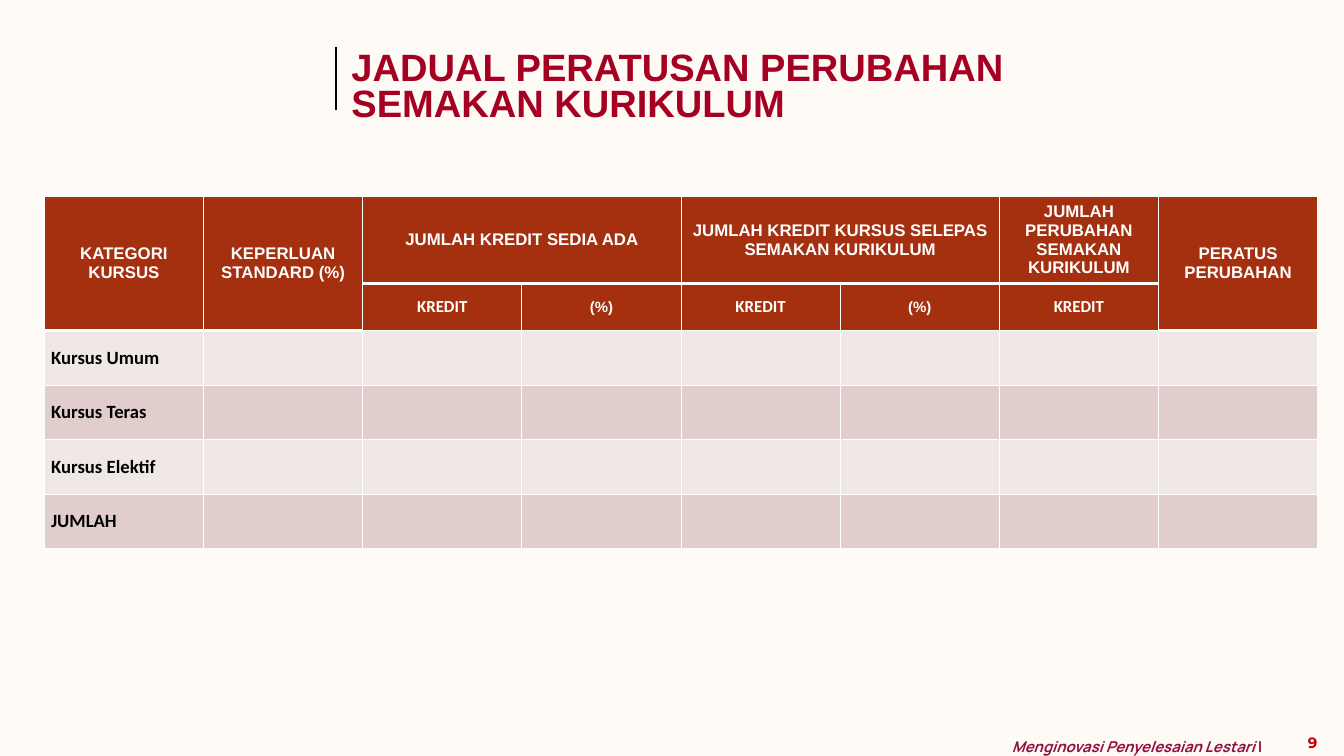
"""Build the slide with the table of curriculum revision percentages."""
from pptx import Presentation
from pptx.dml.color import RGBColor
from pptx.enum.shapes import MSO_CONNECTOR
from pptx.enum.text import MSO_ANCHOR, PP_ALIGN
from pptx.oxml import parse_xml
from pptx.oxml.ns import nsdecls
from pptx.util import Inches, Pt

CREAM = RGBColor(0xFE, 0xFA, 0xF5)
CRIMSON = RGBColor(0xA5, 0x00, 0x21)
PLUM = RGBColor(0x90, 0x10, 0x42)
RED = RGBColor(0xC0, 0x00, 0x00)
RUST = RGBColor(0xA5, 0x30, 0x0F)
PALE = RGBColor(0xF0, 0xE8, 0xE7)
ROSE = RGBColor(0xE1, 0xCD, 0xCC)
WHITE = RGBColor(0xFF, 0xFF, 0xFF)
BLACK = RGBColor(0x00, 0x00, 0x00)

TITLE = "JADUAL PERATUSAN PERUBAHAN SEMAKAN KURIKULUM"
HEADINGS = [
    (0, "KATEGORI KURSUS", 2, 1),
    (1, "KEPERLUAN STANDARD (%)", 2, 1),
    (2, "JUMLAH KREDIT SEDIA ADA", 1, 2),
    (4, "JUMLAH KREDIT KURSUS SELEPAS SEMAKAN KURIKULUM", 1, 2),
    (6, "JUMLAH PERUBAHAN SEMAKAN KURIKULUM", 1, 1),
    (7, "PERATUS PERUBAHAN", 2, 1),
]
SUBHEADINGS = ["KREDIT", "(%)", "KREDIT", "(%)", "KREDIT"]
CATEGORIES = ["Kursus Umum", "Kursus Teras", "Kursus Elektif", "JUMLAH"]
FOOTER = [("Menginovasi Penyelesaian Lestari ", True), ("|", False)]
PAGE_NUMBER = "9"

COLUMNS = 8
HEADER_ROWS = 2
FIRST_SUBHEADING = 2
TALL_COLUMNS = [column for column, _, down, _ in HEADINGS if down == 2]
ROW_HEIGHTS = [1.28, 0.7] + [0.81] * len(CATEGORIES)
TABLE_LEFT, TABLE_TOP, TABLE_WIDTH = 0.66, 2.92, 18.95

TITLE_FONT = {"name": "Arial", "size": Pt(40.8), "bold": True}
HEADING_FONT = {"name": "Arial", "size": Pt(18), "bold": True}
CREDIT_FONT = {"name": "Calibri", "size": Pt(18), "bold": True}
PERCENT_FONT = {"name": "Arial", "size": Pt(16), "bold": True}
CATEGORY_FONT = {"name": "Calibri", "size": Pt(20), "bold": True}
FOOTER_FONT = {"name": "Manrope", "size": Pt(16), "bold": True}
NUMBER_FONT = {"name": "Montserrat", "size": Pt(16), "bold": True}


def add_span(para, text, formats, color, italic=False):
    span = para.add_run()
    span.text = text
    for name, value in {**formats, "italic": italic}.items():
        setattr(span.font, name, value)
    span.font.color.rgb = color


def fill_cell(cell, text, formats, color, align=PP_ALIGN.CENTER):
    cell.vertical_anchor = MSO_ANCHOR.MIDDLE
    para = cell.text_frame.paragraphs[0]
    para.alignment = align
    add_span(para, text, formats, color)


def border_width(edge, column):
    heavy = edge == 1 or (edge == HEADER_ROWS and column in TALL_COLUMNS)
    return Pt(3) if heavy else Pt(1)


def style_cell(cell, row, column):
    widths = {
        "lnL": Pt(1),
        "lnR": Pt(1),
        "lnT": border_width(row, column),
        "lnB": border_width(row + 1, column),
    }
    properties = cell._tc.get_or_add_tcPr()
    for tag, width in widths.items():
        properties.append(parse_xml(
            f'<a:{tag} {nsdecls("a")} w="{int(width)}"><a:solidFill>'
            f'<a:srgbClr val="{WHITE}"/></a:solidFill></a:{tag}>'))
    cell.fill.solid()
    cell.fill.fore_color.rgb = RUST if row < HEADER_ROWS else (PALE, ROSE)[row % 2]


def add_title(page):
    box = page.shapes.title
    box.left, box.top = Inches(5.13), Inches(0.69)
    box.width, box.height = Inches(12.78), Inches(1.25)
    box.text_frame.word_wrap = True
    box.text_frame.vertical_anchor = MSO_ANCHOR.MIDDLE
    para = box.text_frame.paragraphs[0]
    para.alignment = PP_ALIGN.LEFT
    para.line_spacing = 0.8
    add_span(para, TITLE, TITLE_FONT, CRIMSON)
    bar = page.shapes.add_connector(
        MSO_CONNECTOR.STRAIGHT, Inches(5), Inches(1.64), Inches(5), Inches(0.7))
    bar.line.color.rgb = BLACK
    bar.line.width = Pt(3)
    bar._element.spPr.append(parse_xml(f'<a:effectLst {nsdecls("a")}/>'))


def add_credit_table(page):
    table = page.shapes.add_table(
        len(ROW_HEIGHTS), COLUMNS, Inches(TABLE_LEFT), Inches(TABLE_TOP),
        Inches(TABLE_WIDTH), Inches(sum(ROW_HEIGHTS))).table
    for column in table.columns:
        column.width = Inches(TABLE_WIDTH / COLUMNS)
    for row, height in enumerate(ROW_HEIGHTS):
        table.rows[row].height = Inches(height)
        for column in range(COLUMNS):
            style_cell(table.cell(row, column), row, column)
    for column, text, down, across in HEADINGS:
        cell = table.cell(0, column)
        if down * across > 1:
            cell.merge(table.cell(down - 1, column + across - 1))
        fill_cell(cell, text, HEADING_FONT, WHITE)
    for column, text in enumerate(SUBHEADINGS, FIRST_SUBHEADING):
        formats = CREDIT_FONT if text == "KREDIT" else PERCENT_FONT
        fill_cell(table.cell(1, column), text, formats, WHITE)
    for row, text in enumerate(CATEGORIES, HEADER_ROWS):
        fill_cell(table.cell(row, 0), text, CATEGORY_FONT, BLACK, PP_ALIGN.LEFT)


def add_footer(page):
    box = page.shapes.add_textbox(
        Inches(15.06), Inches(10.87), Inches(4.2), Inches(0.38))
    frame = box.text_frame
    frame.word_wrap = True
    for side in ("left", "top", "right", "bottom"):
        setattr(frame, f"margin_{side}", 0)
    frame.paragraphs[0].line_spacing = 1.4
    for text, italic in FOOTER:
        add_span(frame.paragraphs[0], text, FOOTER_FONT, PLUM, italic)
    number = page.shapes.add_textbox(
        Inches(19.07), Inches(10.87), Inches(0.93), Inches(0.37))
    number.text_frame.word_wrap = True
    para = number.text_frame.paragraphs[0]
    para.alignment = PP_ALIGN.CENTER
    add_span(para, PAGE_NUMBER, NUMBER_FONT, RED)


def main():
    deck = Presentation()
    deck.slide_width, deck.slide_height = Inches(20), Inches(11.25)
    page = deck.slides.add_slide(deck.slide_layouts.get_by_name("Title Only"))
    page.background.fill.solid()
    page.background.fill.fore_color.rgb = CREAM
    add_footer(page)
    add_credit_table(page)
    add_title(page)
    deck.save("out.pptx")


if __name__ == "__main__":
    main()
